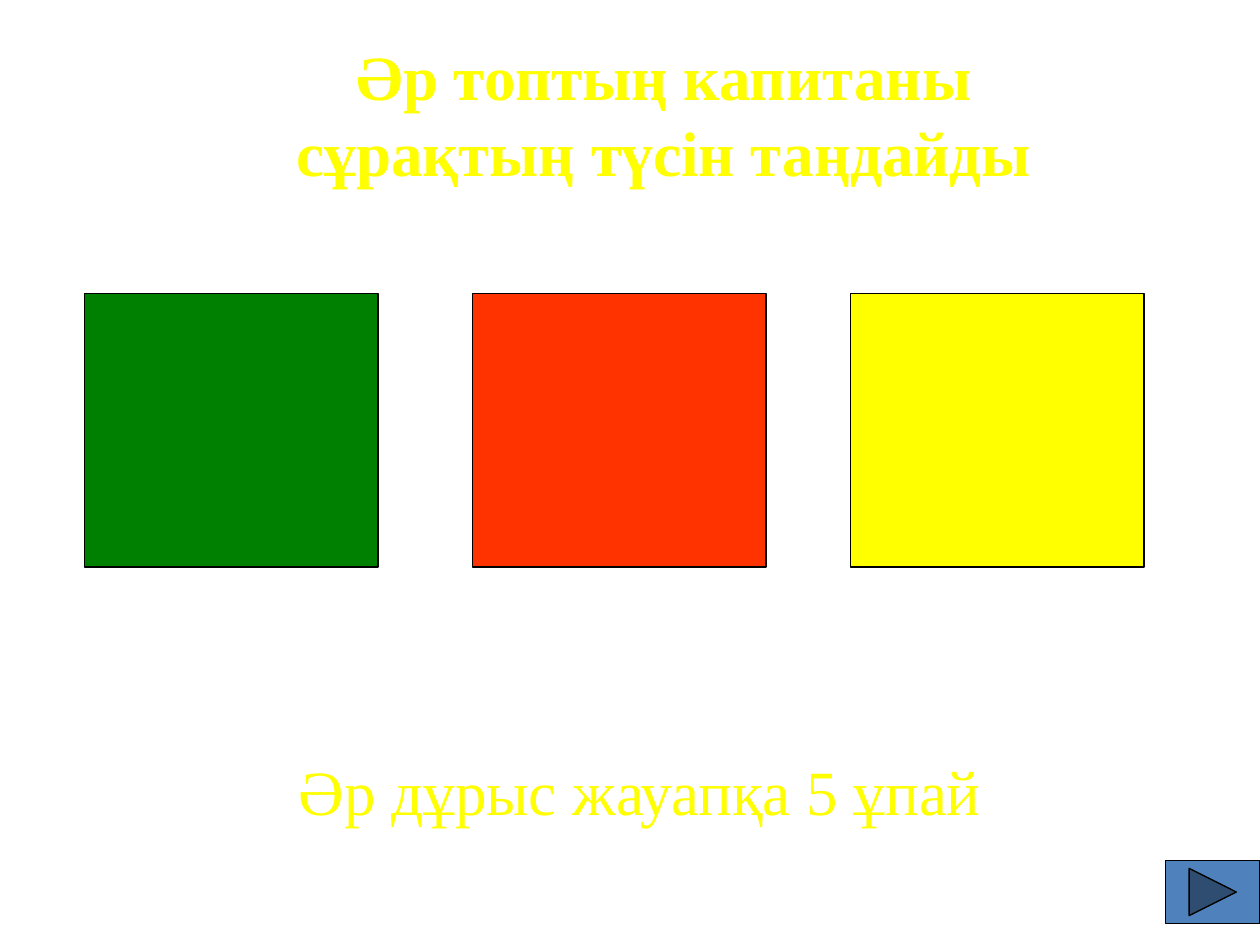
from lxml.etree import SubElement
from pptx import Presentation
from pptx.dml.color import RGBColor
from pptx.enum.shapes import MSO_SHAPE
from pptx.enum.text import MSO_ANCHOR, MSO_AUTO_SIZE, PP_ALIGN
from pptx.oxml.ns import qn
from pptx.util import Inches, Pt

GREEN = RGBColor(0x00, 0x80, 0x00)
RED = RGBColor(0xFF, 0x33, 0x00)
YELLOW = RGBColor(0xFF, 0xFF, 0x00)
BLUE = RGBColor(0x4F, 0x81, 0xBD)
BLACK = RGBColor(0x00, 0x00, 0x00)


def outline_letters(run):
    """Give the letters of a run a thin black outline."""
    properties = run.font._element
    outline = SubElement(properties, qn("a:ln"), w=str(Pt(1)))
    color = SubElement(SubElement(outline, qn("a:solidFill")), qn("a:srgbClr"))
    color.set("val", str(BLACK))
    properties.insert(0, outline)


def write_lines(frame, lines, bold):
    frame.text = "\n".join(lines)
    frame.word_wrap = False
    frame.auto_size = MSO_AUTO_SIZE.NONE
    frame.vertical_anchor = MSO_ANCHOR.TOP
    for paragraph in frame.paragraphs:
        paragraph.alignment = PP_ALIGN.CENTER
        paragraph.font.name = "Times New Roman"
        paragraph.font.size = Pt(36)
        paragraph.font.bold = bold
        paragraph.font.color.rgb = YELLOW
        for run in paragraph.runs:
            outline_letters(run)


def add_heading(slide, lines):
    heading = slide.shapes.title
    heading.left, heading.top = Inches(1.17), Inches(0.25)
    heading.width, heading.height = Inches(8.2), Inches(1.55)
    write_lines(heading.text_frame, lines, bold=True)


def add_scoring_rule(slide, rule):
    box = slide.shapes.add_textbox(
        Inches(1.41), Inches(5.92), Inches(7.34), Inches(0.8))
    write_lines(box.text_frame, [rule], bold=False)


def add_button(slide, kind, left, top, width, height, color):
    button = slide.shapes.add_shape(
        kind, Inches(left), Inches(top), Inches(width), Inches(height))
    button.shadow.inherit = False
    button.fill.solid()
    button.fill.fore_color.rgb = color
    button.line.color.rgb = BLACK
    button.line.width = Pt(0.75)


def main():
    presentation = Presentation()
    presentation.slide_width = Inches(10)
    presentation.slide_height = Inches(7.5)
    title_only = presentation.slide_layouts[5]
    slide = presentation.slides.add_slide(title_only)

    for left, color in ((0.67, GREEN), (3.75, RED), (6.75, YELLOW)):
        add_button(slide, MSO_SHAPE.ACTION_BUTTON_CUSTOM,
                   left, 2.33, 2.33, 2.17, color)
    add_scoring_rule(slide, "Әр дұрыс жауапқа 5 ұпай")
    add_heading(slide, ["Әр топтың капитаны", "сұрақтың түсін таңдайды"])
    add_button(slide, MSO_SHAPE.ACTION_BUTTON_FORWARD_OR_NEXT,
               9.25, 6.83, 0.75, 0.5, BLUE)

    presentation.save("out.pptx")


if __name__ == "__main__":
    main()
